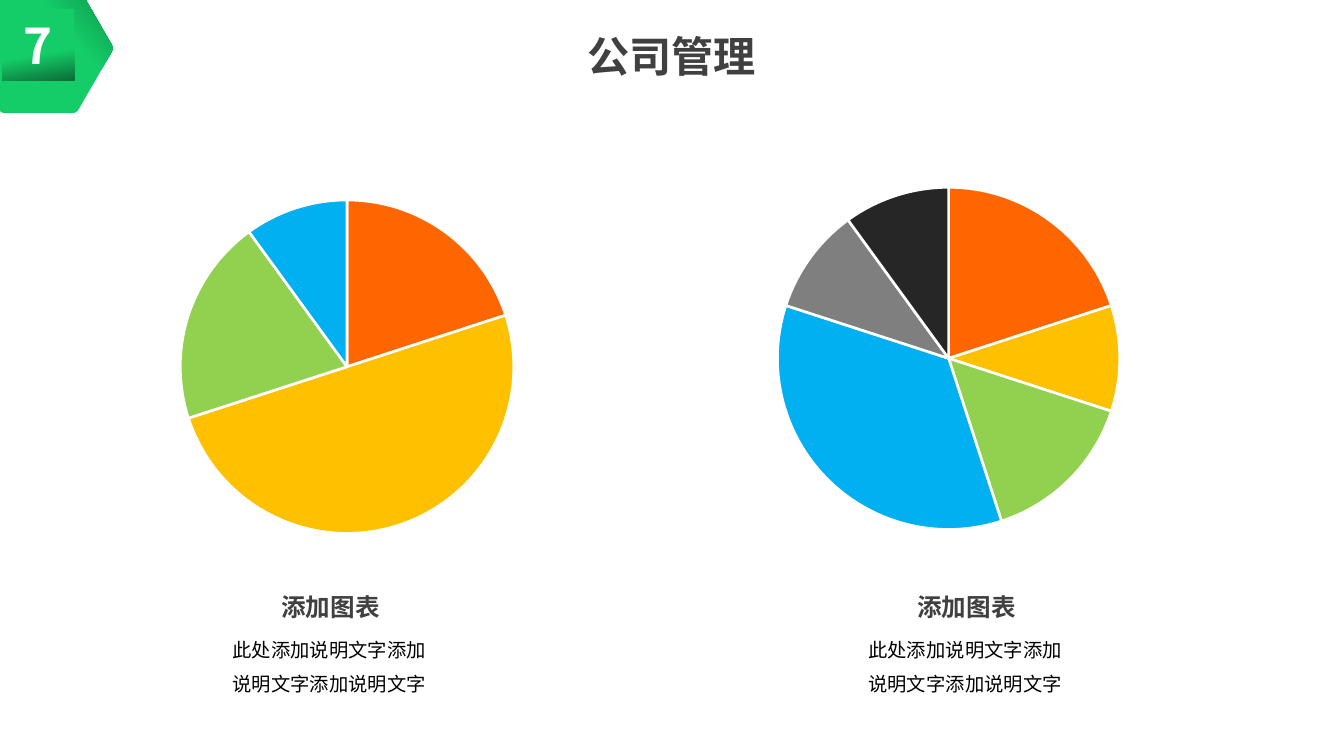
from dataclasses import dataclass
import math

import pptx
import pptx.chart.data
import pptx.dml.color
import pptx.enum.chart
import pptx.enum.shapes
import pptx.enum.text
import pptx.oxml
import pptx.oxml.ns
import pptx.util
from pptx.util import Pt

RGBColor = pptx.dml.color.RGBColor
WHITE = RGBColor(0xFF, 0xFF, 0xFF)
BLACK = RGBColor(0x00, 0x00, 0x00)
DARK_GRAY = RGBColor(0x40, 0x40, 0x40)
GREEN = RGBColor(0x14, 0xCD, 0x68)
DEEP_GREEN = RGBColor(0x0B, 0x6E, 0x38)
SLICE_COLORS = (
    RGBColor(0xFF, 0x66, 0x00),
    RGBColor(0xFF, 0xC0, 0x00),
    RGBColor(0x92, 0xD0, 0x50),
    RGBColor(0x00, 0xB0, 0xF0),
    RGBColor(0x7F, 0x7F, 0x7F),
    RGBColor(0x26, 0x26, 0x26),
)
TEXT_FONT = "Noto Sans CJK SC"
CHART_FONT = "Arial"
CENTER = pptx.enum.text.PP_ALIGN.CENTER
LEFT = pptx.enum.text.PP_ALIGN.LEFT
MIDDLE = pptx.enum.text.MSO_ANCHOR.MIDDLE


@dataclass(frozen=True)
class Box:
    left: float
    top: float
    width: float
    height: float

    def lengths(self) -> tuple:
        return Pt(self.left), Pt(self.top), Pt(self.width), Pt(self.height)


@dataclass(frozen=True)
class Pie:
    box: Box
    plot_area: Box  # fractions of the chart box
    values: tuple


@dataclass(frozen=True)
class Caption:
    box: Box
    heading: str
    body: str


PIES = (
    Pie(Box(67, 112.3, 242.6, 212.4), Box(0.147, 0.007, 0.783, 0.896),
        (20, 50, 20, 10)),
    Pie(Box(407.5, 64.1, 337.7, 259.9), Box(0.055, 0.164, 0.676, 0.75),
        (20, 10, 15, 35, 10, 10)),
)
CAPTIONS = tuple(
    Caption(Box(left, 333.4, 126, 67), "添加图表", "此处添加说明文字添加说明文字添加说明文字")
    for left in (125.3, 487.4)
)


def add_run(paragraph, text: str, size: float, color: RGBColor, bold: bool) -> None:
    run = paragraph.add_run()
    run.text = text
    run.font.size = Pt(size)
    run.font.bold = bold
    run.font.color.rgb = color
    run.font.name = TEXT_FONT
    east_asian = pptx.oxml.parse_xml(
        f'<a:ea {pptx.oxml.ns.nsdecls("a")} typeface="{TEXT_FONT}"/>')
    run.font._element.append(east_asian)


def clear_insets(text_frame) -> None:
    text_frame.margin_left = text_frame.margin_right = 0
    text_frame.margin_top = text_frame.margin_bottom = 0


def style_badge_part(shape) -> None:
    shape.shadow.inherit = False
    shape.line.fill.background()
    shape.fill.gradient()
    shape.fill.gradient_angle = 280
    for stop, position, color in zip(
            shape.fill.gradient_stops, (0.62, 1), (GREEN, DEEP_GREEN)):
        stop.position = position
        stop.color.rgb = color


def rounded_hexagon(center_x: float, center_y: float, radius: float,
                    trim: float, steps: int = 6) -> list:
    """Outline of a regular hexagon with softened corners."""
    corners = [(center_x + radius * math.cos(math.radians(angle)),
                center_y + radius * math.sin(math.radians(angle)))
               for angle in range(0, 360, 60)]
    share = trim / radius
    points = []
    for index, corner in enumerate(corners):
        before, after = corners[index - 1], corners[(index + 1) % 6]
        for step in range(steps + 1):
            t = step / steps
            pull_before, pull_after = share * (1 - t) ** 2, share * t ** 2
            points.append(tuple(
                Pt(c + pull_before * (b - c) + pull_after * (a - c))
                for b, c, a in zip(before, corner, after)))
    return points


def add_badge(slide, number: str) -> None:
    points = rounded_hexagon(22, 27.5, 42.8, 2.8)
    builder = slide.shapes.build_freeform(*points[0])
    builder.add_line_segments(points[1:], close=True)
    hexagon = builder.convert_to_shape()
    hexagon.rotation = 240
    style_badge_part(hexagon)

    square = slide.shapes.add_shape(
        pptx.enum.shapes.MSO_SHAPE.RECTANGLE, *Box(1.4, 5, 41, 41).lengths())
    style_badge_part(square)
    clear_insets(square.text_frame)
    square.text_frame.vertical_anchor = MIDDLE
    paragraph = square.text_frame.paragraphs[0]
    paragraph.alignment = CENTER
    add_run(paragraph, number, 28, WHITE, True)


def add_pie(slide, pie: Pie) -> None:
    data = pptx.chart.data.CategoryChartData()
    data.categories = [str(index + 1) for index in range(len(pie.values))]
    data.add_series("Series 1", pie.values)
    chart = slide.shapes.add_chart(
        pptx.enum.chart.XL_CHART_TYPE.PIE, *pie.box.lengths(), data).chart
    chart.has_title = False
    chart.has_legend = False
    chart.font.size = Pt(10)
    chart.font.name = CHART_FONT
    chart.font.color.rgb = BLACK
    plot = chart.plots[0]
    plot.vary_by_categories = True
    plot.has_data_labels = False
    for index, color in enumerate(SLICE_COLORS[:len(pie.values)]):
        slice_format = plot.series[0].points[index].format
        slice_format.fill.solid()
        slice_format.fill.fore_color.rgb = color
        slice_format.line.color.rgb = WHITE
        slice_format.line.width = Pt(1.5)

    # Fixed position of the pie inside its chart
    plot_area = chart._chartSpace.chart.plotArea
    for layout in plot_area.findall(pptx.oxml.ns.qn("c:layout")):
        plot_area.remove(layout)
    area = pie.plot_area
    plot_area.insert(0, pptx.oxml.parse_xml(
        f'<c:layout {pptx.oxml.ns.nsdecls("c")}><c:manualLayout>'
        '<c:layoutTarget val="inner"/><c:xMode val="edge"/><c:yMode val="edge"/>'
        f'<c:x val="{area.left}"/><c:y val="{area.top}"/>'
        f'<c:w val="{area.width}"/><c:h val="{area.height}"/>'
        '</c:manualLayout></c:layout>'))


def add_caption(slide, caption: Caption) -> None:
    text_frame = slide.shapes.add_textbox(*caption.box.lengths()).text_frame
    text_frame.word_wrap = True
    text_frame.auto_size = pptx.enum.text.MSO_AUTO_SIZE.SHAPE_TO_FIT_TEXT
    heading = text_frame.paragraphs[0]
    heading.alignment = CENTER
    add_run(heading, caption.heading, 14, DARK_GRAY, True)
    body = text_frame.add_paragraph()
    body.alignment = LEFT
    body.line_spacing = 1.5
    body.space_before = Pt(3)
    add_run(body, caption.body, 11, BLACK, False)


def set_title(slide, text: str) -> None:
    title = slide.shapes.title
    title.left, title.top, title.width, title.height = Box(
        303.1, 17.3, 158.4, 28.8).lengths()
    clear_insets(title.text_frame)
    title.text_frame.vertical_anchor = MIDDLE
    paragraph = title.text_frame.paragraphs[0]
    paragraph.alignment = CENTER
    add_run(paragraph, text, 24, DARK_GRAY, True)


def main() -> None:
    presentation = pptx.Presentation()
    presentation.slide_width, presentation.slide_height = Pt(765.35), Pt(425.5)
    slide = presentation.slides.add_slide(presentation.slide_layouts[5])
    for pie in PIES:
        add_pie(slide, pie)
    add_badge(slide, "7")
    set_title(slide, "公司管理")
    for caption in CAPTIONS:
        add_caption(slide, caption)
    presentation.save("out.pptx")


if __name__ == "__main__":
    main()
